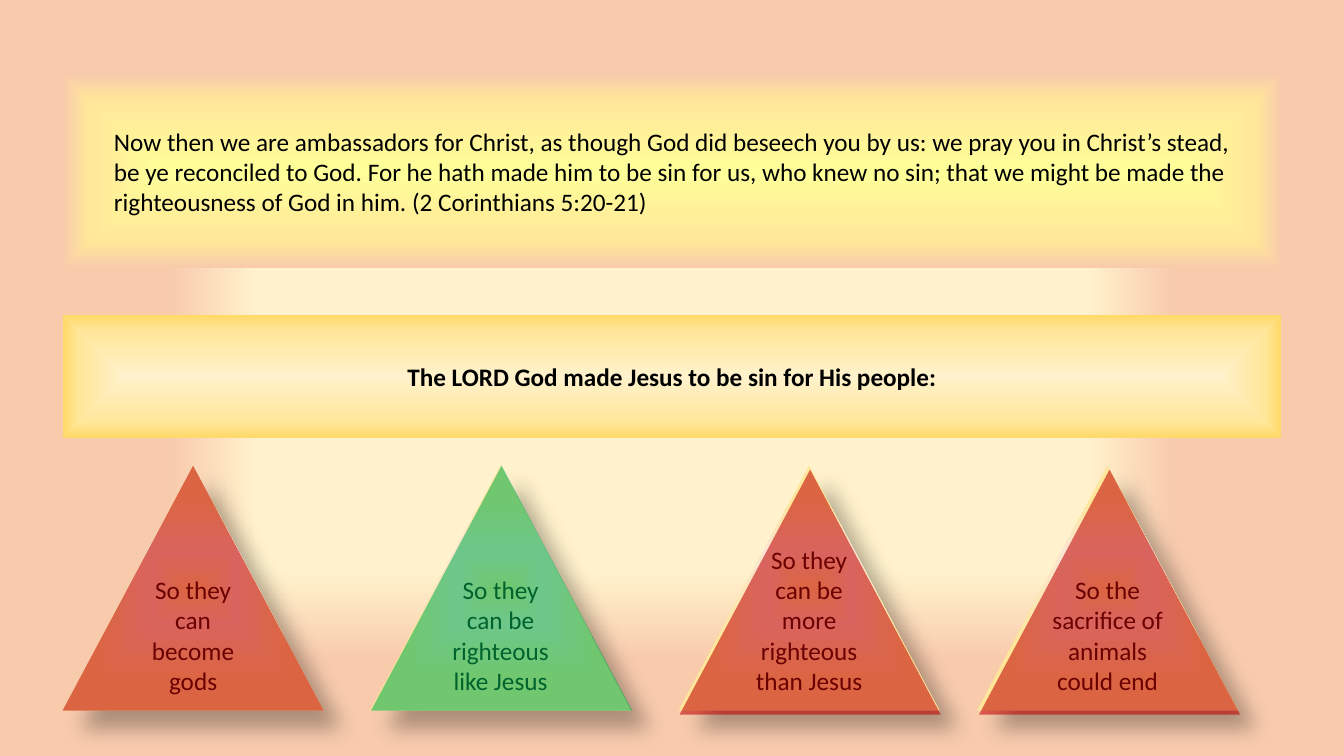
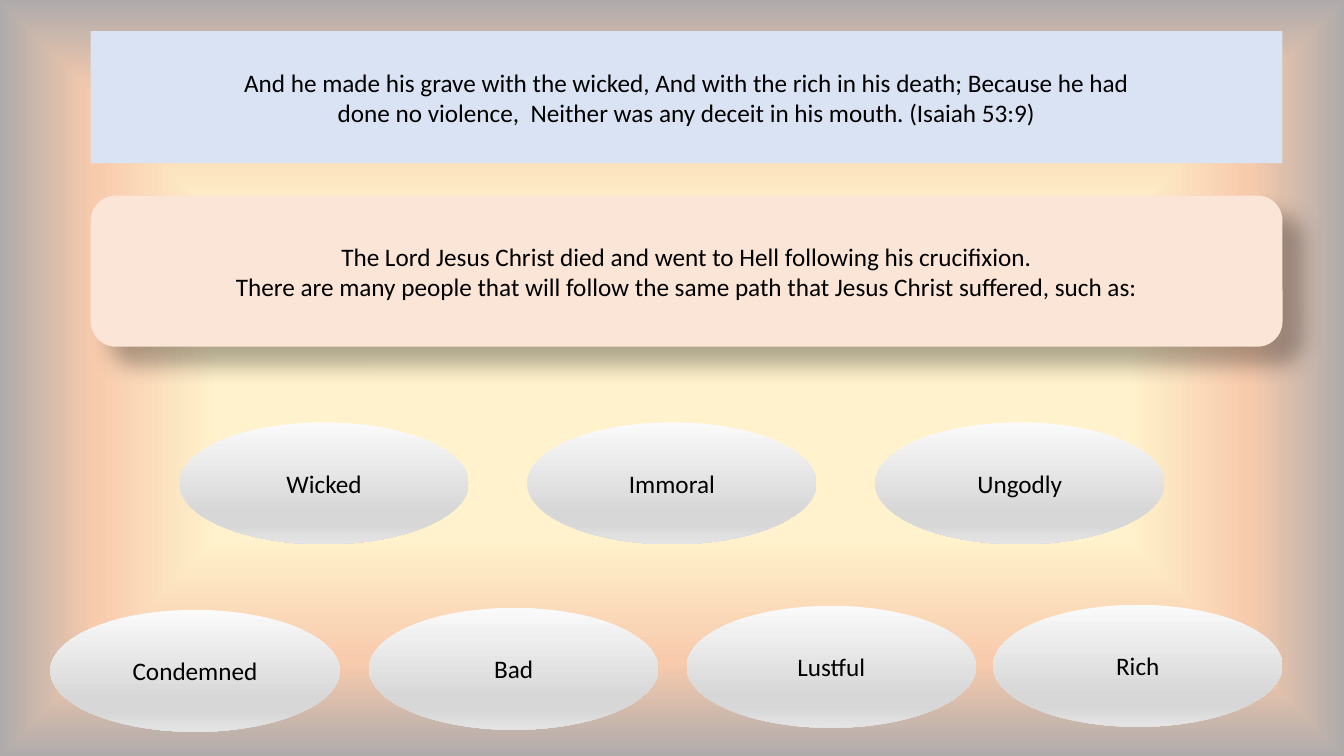
from pptx import Presentation
from pptx.dml.color import RGBColor
from pptx.enum.shapes import MSO_SHAPE as Shape
from pptx.enum.text import MSO_ANCHOR as Anchor, MSO_AUTO_SIZE as AutoSize, PP_ALIGN as Align
from pptx.oxml import parse_xml
from pptx.oxml.ns import nsdecls, qn
from pptx.util import Inches, Pt

CREAM, GOLD, PEACH, BLUSH = "FFF2CC", "FFE699", "F8CBAD", "FBE5D6"
RED, GREEN = "C00000", "00B050"
SILVER = [(0, "FAFAFA"), (74, "D7D7D7"), (83, "D7D7D7"), (100, "E4E4E4")]
TRIANGLE_STOPS = [(0, GOLD), (29, BLUSH), (72, GOLD)]
FROM_CENTRE = (
    '<a:path path="rect"><a:fillToRect l="50000" t="50000" r="50000" b="50000"/></a:path>'
)
DOWNWARD = '<a:lin ang="5400000" scaled="0"/>'


def color(value):
    """Return the colour of a hex string."""
    return RGBColor.from_string(value)


class Deck:
    """Hold the shared style and the current slide."""

    FONT = {"name": "Calibri", "size": Pt(18), "bold": False}
    TEXT_COLOR = "000000"

    def __init__(self):
        """Start a widescreen presentation."""
        self.presentation = Presentation()
        self.presentation.slide_width = Inches(13.33)
        self.presentation.slide_height = Inches(7.5)
        self.slide = None

    def add_slide(self, stops):
        """Add a title-only slide with a gradient background."""
        self.slide = self.presentation.slides.add_slide(self.presentation.slide_layouts[5])
        self.gradient(self.slide.background.fill, self.slide.element, stops)

    def gradient(self, fill, element, stops, direction=FROM_CENTRE):
        """Give a fill the listed gradient stops."""
        fill.gradient()
        current = next(element.iter(qn("a:gradFill")))
        stop_xml = "".join(
            f'<a:gs pos="{position * 1000}"><a:srgbClr val="{value}"/></a:gs>'
            for position, value in stops
        )
        current.getparent().replace(current, parse_xml(
            f'<a:gradFill {nsdecls("a")} rotWithShape="1">'
            f"<a:gsLst>{stop_xml}</a:gsLst>{direction}</a:gradFill>"
        ))

    def paint(self, shape, fill, direction=FROM_CENTRE):
        """Fill a shape with a colour or gradient stops."""
        if isinstance(fill, str):
            shape.fill.solid()
            shape.fill.fore_color.rgb = color(fill)
        else:
            self.gradient(shape.fill, shape.element, fill, direction)

    def set_text(self, shape, text, align=Align.CENTER, bold=False, **frame_values):
        """Put styled paragraphs into a shape."""
        frame = shape.text_frame
        frame.text = text
        values = {"word_wrap": True, "auto_size": AutoSize.NONE, "vertical_anchor": Anchor.MIDDLE}
        for name, value in {**values, **frame_values}.items():
            setattr(frame, name, value)
        for paragraph in frame.paragraphs:
            paragraph.alignment = align
            for name, value in {**self.FONT, "bold": bold}.items():
                setattr(paragraph.font, name, value)
            paragraph.font.color.rgb = color(self.TEXT_COLOR)

    def title(self, box, text, fill, bold=False):
        """Turn the title placeholder into a filled band."""
        shape = self.slide.shapes.title
        for name, value in zip(("left", "top", "width", "height"), box):
            setattr(shape, name, Inches(value))
        self.paint(shape, fill)
        self.set_text(shape, text, bold=bold)

    def shape(self, kind, box, fill, direction=FROM_CENTRE):
        """Add a preset shape without line or shadow."""
        shape = self.slide.shapes.add_shape(kind, *map(Inches, box))
        shape.shadow.inherit = False
        shape.line.fill.background()
        self.paint(shape, fill, direction)
        return shape

    def drop_shadow(self, shape):
        """Cast a soft shadow to the lower right."""
        effects = next(shape.element.iter(qn("a:effectLst")))
        effects.append(parse_xml(
            f'<a:outerShdw {nsdecls("a")} blurRad="{Pt(15)}" dist="{Pt(18)}" dir="2700000" '
            'algn="tl" rotWithShape="0"><a:srgbClr val="000000"><a:alpha val="30000"/>'
            "</a:srgbClr></a:outerShdw>"
        ))

    def triangle(self, left, text):
        """Add a shadowed triangle with its text near the base."""
        shape = self.shape(Shape.ISOSCELES_TRIANGLE, (left, 4.62, 2.59, 2.43), TRIANGLE_STOPS)
        self.drop_shadow(shape)
        self.set_text(shape, text, vertical_anchor=Anchor.BOTTOM, margin_bottom=Inches(0.15))

    def tint(self, left, top, value):
        """Lay a translucent triangle over another."""
        shape = self.shape(Shape.ISOSCELES_TRIANGLE, (left, top, 2.59, 2.43), value)
        rgb = next(shape.element.iter(qn("a:srgbClr")))
        rgb.append(parse_xml(f'<a:alpha {nsdecls("a")} val="56000"/>'))

    def ellipse(self, left, top, text):
        """Add a silver ellipse with a label."""
        shape = self.shape(Shape.OVAL, (left, top, 2.87, 1.21), SILVER, DOWNWARD)
        self.set_text(shape, text)


def build_sin_slide(deck):
    """Build the slide about being made sin."""
    deck.add_slide([(51, CREAM), (75, PEACH), (100, PEACH)])
    deck.title(
        (0.62, 3.12, 12.09, 1.23),
        "The LORD God made Jesus to be sin for His people:",
        [(0, CREAM), (74, GOLD), (100, "FFD966")],
        bold=True,
    )
    verse = deck.shape(
        Shape.RECTANGLE, (0.62, 0.74, 12.09, 1.92), [(0, "FFFF99"), (74, GOLD), (100, PEACH)]
    )
    deck.set_text(
        verse,
        "Now then we are ambassadors for Christ, as though God did beseech you by us: "
        "we pray you in Christ’s stead, be ye reconciled to God. For he hath made him to be "
        "sin for us, who knew no sin; that we might be made the righteousness of God in him. "
        "(2 Corinthians 5:20-21)",
        align=Align.LEFT,
        margin_left=Inches(0.51),
        margin_right=Inches(0.51),
    )
    answers = [
        (0.62, "So they can become gods"),
        (3.67, "So they can be righteous like Jesus"),
        (6.73, "So they can be more righteous than Jesus"),
        (9.69, "So the sacrifice of animals could end"),
    ]
    for left, text in answers:
        deck.triangle(left, text)
    tints = [(0.62, 4.62, RED), (3.68, 4.62, GREEN), (6.74, 4.66, RED), (9.71, 4.66, RED)]
    for left, top, value in tints:
        deck.tint(left, top, value)


def build_grave_slide(deck):
    """Build the slide about the grave with the wicked."""
    deck.add_slide([(42, CREAM), (75, PEACH), (100, "AFABAB")])
    deck.title(
        (0.9, 0.31, 11.82, 1.31),
        "And he made his grave with the wicked, And with the rich in his death; Because he had\n"
        "done no violence,  Neither was any deceit in his mouth. (Isaiah 53:9)",
        "DAE3F3",
    )
    statement = deck.shape(Shape.ROUNDED_RECTANGLE, (0.9, 1.94, 11.82, 1.5), BLUSH)
    deck.drop_shadow(statement)
    deck.set_text(
        statement,
        "The Lord Jesus Christ died and went to Hell following his crucifixion.\n"
        "There are many people that will follow the same path that Jesus Christ suffered, such as:",
    )
    for index, text in enumerate(("Wicked", "Immoral", "Ungodly")):
        deck.ellipse(1.78 + 3.45 * index, 4.19, text)
    lower_row = [
        (0.5, 6.05, "Condemned"),
        (3.66, 6.03, "Bad"),
        (6.81, 6.01, "Lustful"),
        (9.85, 6, "Rich"),
    ]
    for left, top, text in lower_row:
        deck.ellipse(left, top, text)


def main():
    """Build and save both slides."""
    deck = Deck()
    build_sin_slide(deck)
    build_grave_slide(deck)
    deck.presentation.save("out.pptx")


if __name__ == "__main__":
    main()
